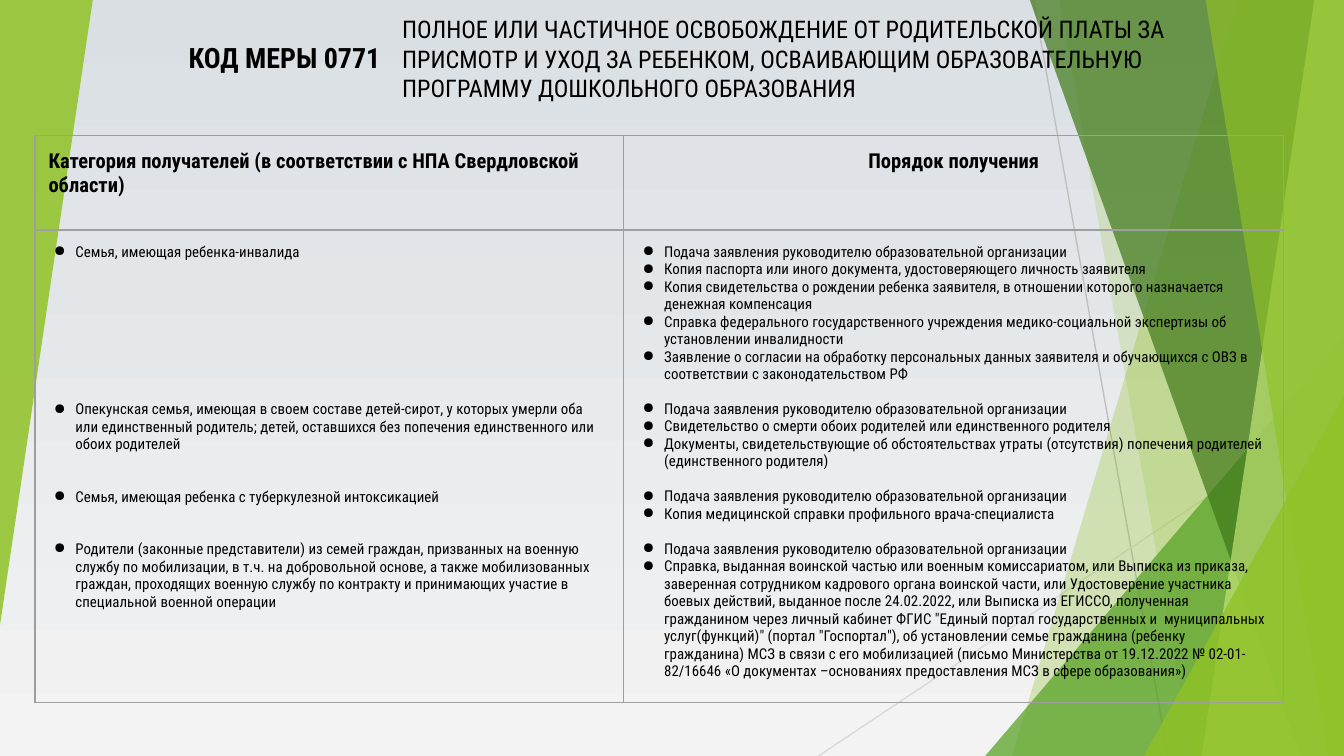
from lxml.etree import SubElement
from pptx import Presentation
from pptx.dml.color import RGBColor
from pptx.enum.shapes import MSO_CONNECTOR as Connector, MSO_SHAPE as Shape
from pptx.enum.text import MSO_ANCHOR as Anchor, MSO_AUTO_SIZE as AutoSize, PP_ALIGN as Align
from pptx.oxml import parse_xml
from pptx.oxml.ns import nsdecls, qn
from pptx.util import Pt

BLACK = RGBColor(0x00, 0x00, 0x00)
BACK_TOP = RGBColor(0xDA, 0xDF, 0xE4)
BACK_BOTTOM = RGBColor(0xF3, 0xF3, 0xF3)
BORDER = RGBColor(0x9E, 0x9E, 0x9E)
GRAY = RGBColor(0xBF, 0xBF, 0xBF)
LIGHT_GRAY = RGBColor(0xD9, 0xD9, 0xD9)
LIME = RGBColor(0x90, 0xC2, 0x26)
PALE_LIME = RGBColor(0xC0, 0xE4, 0x74)
GREEN = RGBColor(0x54, 0xA0, 0x21)
DARK_GREEN = RGBColor(0x3F, 0x78, 0x19)

WIDTH, HEIGHT = 720, 405
LINE = 9.38

APPLICATION = "Подача заявления руководителю образовательной организации"
RECIPIENTS = [
    (0, "Семья, имеющая ребенка-инвалида"),
    (8, "Опекунская семья, имеющая в своем составе детей-сирот, у которых умерли оба или единственный родитель; "
        "детей, оставшихся без попечения единственного или обоих родителей"),
    (2, "Семья, имеющая ребенка с туберкулезной интоксикацией"),
    (2, "Родители (законные представители) из семей граждан, призванных на военную службу по мобилизации, "
        "в т.ч. на добровольной основе, а также мобилизованных граждан, проходящих военную службу по контракту "
        "и принимающих участие в специальной военной операции"),
]
PROCEDURES = [
    (0, APPLICATION),
    (0, "Копия паспорта или иного документа, удостоверяющего личность заявителя"),
    (0, "Копия свидетельства о рождении ребенка заявителя, в отношении которого назначается денежная компенсация"),
    (0, "Справка федерального государственного учреждения медико-социальной экспертизы об установлении инвалидности"),
    (0, "Заявление о согласии на обработку персональных данных заявителя и обучающихся с ОВЗ "
        "в соответствии с законодательством РФ"),
    (1, APPLICATION),
    (0, "Свидетельство о смерти обоих родителей или единственного родителя"),
    (0, "Документы, свидетельствующие об обстоятельствах утраты (отсутствия) попечения родителей "
        "(единственного родителя)"),
    (1, APPLICATION),
    (0, "Копия медицинской справки профильного врача-специалиста"),
    (1, APPLICATION),
    (0, "Справка, выданная воинской частью или военным комиссариатом, или Выписка из приказа, заверенная "
        "сотрудником кадрового органа воинской части, или Удостоверение участника боевых действий, выданное "
        "после 24.02.2022, или Выписка из ЕГИССО, полученная гражданином через личный кабинет ФГИС \"Единый "
        "портал государственных и  муниципальных услуг(функций)\" (портал \"Госпортал\"), об установлении семье "
        "гражданина (ребенку гражданина) МСЗ в связи с его мобилизацией (письмо Министерства от 19.12.2022 "
        "№ 02-01-82/16646 «О документах –основаниях предоставления МСЗ в сфере образования»)"),
]


def apply(target, values):
    for name, value in values.items():
        setattr(target, name, value)


class SlideBuilder:
    font_name = "Roboto Condensed"
    cell_margins = {f"margin_{side}": Pt(7.2) for side in ("left", "top", "right", "bottom")}

    def __init__(self, slide):
        self.slide = slide
        self.shapes = slide.shapes

    def background(self, top, bottom):
        fill = self.slide.background.fill
        fill.gradient()
        fill.gradient_angle = 270
        for stop, color in zip(fill.gradient_stops, (top, bottom)):
            stop.color.rgb = color

    def line(self, start, end, color):
        connector = self.shapes.add_connector(Connector.STRAIGHT, *map(Pt, start + end))
        connector.line.color.rgb = color
        connector.line.width = Pt(0.75)
        SubElement(connector.element.spPr, qn("a:effectLst"))

    def paint(self, shape, color, opacity):
        shape.shadow.inherit = False
        shape.line.fill.background()
        shape.fill.solid()
        shape.fill.fore_color.rgb = color
        rgb = shape.element.spPr.find(qn("a:solidFill"))[0]
        SubElement(rgb, qn("a:alpha"), val=str(opacity * 1000))

    def facet(self, top_left, bottom_left, color, opacity):
        builder = self.shapes.build_freeform(Pt(top_left), Pt(-0.6))
        corners = [(WIDTH, -0.6), (WIDTH, HEIGHT), (bottom_left, HEIGHT)]
        builder.add_line_segments([(Pt(x), Pt(y)) for x, y in corners])
        self.paint(builder.convert_to_shape(), color, opacity)

    def triangle(self, box, color, opacity, rotation=0):
        shape = self.shapes.add_shape(Shape.ISOSCELES_TRIANGLE, *map(Pt, box))
        shape.adjustments[0] = 1
        shape.rotation = rotation
        self.paint(shape, color, opacity)

    def add_words(self, paragraph, text, size, bold=False, align=Align.LEFT):
        paragraph.alignment = align
        run = paragraph.add_run()
        run.text = text
        apply(run.font, {"name": self.font_name, "size": Pt(size), "bold": bold})
        run.font.color.rgb = BLACK

    def text(self, box, text, size):
        frame = self.shapes.add_textbox(*map(Pt, box)).text_frame
        apply(frame, {"word_wrap": True, "vertical_anchor": Anchor.MIDDLE, **self.cell_margins})
        self.add_words(frame.paragraphs[0], text, size, True, Align.RIGHT)

    def title(self, box, text, size):
        title = self.shapes.title
        apply(title, dict(zip(("left", "top", "width", "height"), map(Pt, box))))
        frame = title.text_frame
        apply(frame, {"word_wrap": True, "auto_size": AutoSize.NONE, "vertical_anchor": Anchor.MIDDLE,
                      "margin_left": Pt(5), "margin_right": Pt(5), "margin_top": Pt(2.9), "margin_bottom": Pt(2.9)})
        self.add_words(frame.paragraphs[0], text, size)
        self.shapes.element.append(title.element)

    def bullets(self, cell, items):
        frame = cell.text_frame
        for index, (blank_lines, text) in enumerate(items):
            paragraph = frame.add_paragraph() if index else frame.paragraphs[0]
            self.add_words(paragraph, text, 8)
            paragraph.space_before = Pt(blank_lines * LINE)
            properties = paragraph._p.get_or_add_pPr()
            properties.set("marL", str(Pt(14.4)))
            properties.set("indent", str(Pt(-11.5)))
            SubElement(properties, qn("a:buChar"), char="●")

    def style_cell(self, cell):
        apply(cell, {"vertical_anchor": Anchor.TOP, **self.cell_margins})
        cell.fill.background()
        properties = cell._tc.get_or_add_tcPr()
        for index, side in enumerate("LRTB"):
            properties.insert(index, parse_xml(
                f'<a:ln{side} {nsdecls("a")} w="{Pt(0.75)}"><a:solidFill>'
                f'<a:srgbClr val="{BORDER}"/></a:solidFill></a:ln{side}>'))

    def table(self, left, top, widths, heights, headings, lists):
        box = (left, top, sum(widths), sum(heights))
        table = self.shapes.add_table(len(heights), len(widths), *map(Pt, box)).table
        apply(table, {"first_row": False, "horz_banding": False})
        for column, width in zip(table.columns, widths):
            column.width = Pt(width)
        for row, height in zip(table.rows, heights):
            row.height = Pt(height)
        for cell in table.iter_cells():
            self.style_cell(cell)
        for column, (heading, align) in enumerate(headings):
            self.add_words(table.cell(0, column).text_frame.paragraphs[0], heading, 11, True, align)
            self.bullets(table.cell(1, column), lists[column])


def main():
    presentation = Presentation()
    apply(presentation, {"slide_width": Pt(WIDTH), "slide_height": Pt(HEIGHT)})
    builder = SlideBuilder(presentation.slides.add_slide(presentation.slide_layouts[5]))

    builder.background(BACK_TOP, BACK_BOTTOM)
    builder.line((553.7, 0), (625.7, HEIGHT), GRAY)
    builder.line((WIDTH, 217.4), (438.5, HEIGHT), LIGHT_GRAY)
    builder.facet(663, 542.2, LIME, 30)
    builder.facet(567.4, 638.6, LIME, 20)
    builder.triangle((527.8, 180, 192.2, 225), GREEN, 72)
    builder.facet(551.5, 697, DARK_GREEN, 70)
    builder.facet(704.2, 643.7, PALE_LIME, 70)
    builder.facet(645.8, 711.4, LIME, 65)
    builder.triangle((612.7, 212, 107.3, 193), LIME, 80)
    builder.triangle((0, 0, 49.7, 334.8), LIME, 85, 180)

    builder.text((59, 13, 152, 35.3), "КОД МЕРЫ 0771", 15)
    builder.table(
        18.8, 72.8, (315.4, 353.6), (50.4, 252.7),
        [("Категория получателей (в соответствии с НПА Свердловской области)", Align.LEFT),
         ("Порядок получения", Align.CENTER)],
        [RECIPIENTS, PROCEDURES])
    builder.title(
        (210.5, 0.7, 453.6, 61.2),
        "ПОЛНОЕ ИЛИ ЧАСТИЧНОЕ ОСВОБОЖДЕНИЕ ОТ РОДИТЕЛЬСКОЙ ПЛАТЫ ЗА ПРИСМОТР И УХОД ЗА РЕБЕНКОМ, "
        "ОСВАИВАЮЩИМ ОБРАЗОВАТЕЛЬНУЮ ПРОГРАММУ ДОШКОЛЬНОГО ОБРАЗОВАНИЯ", 13)

    presentation.save("out.pptx")


if __name__ == "__main__":
    main()
